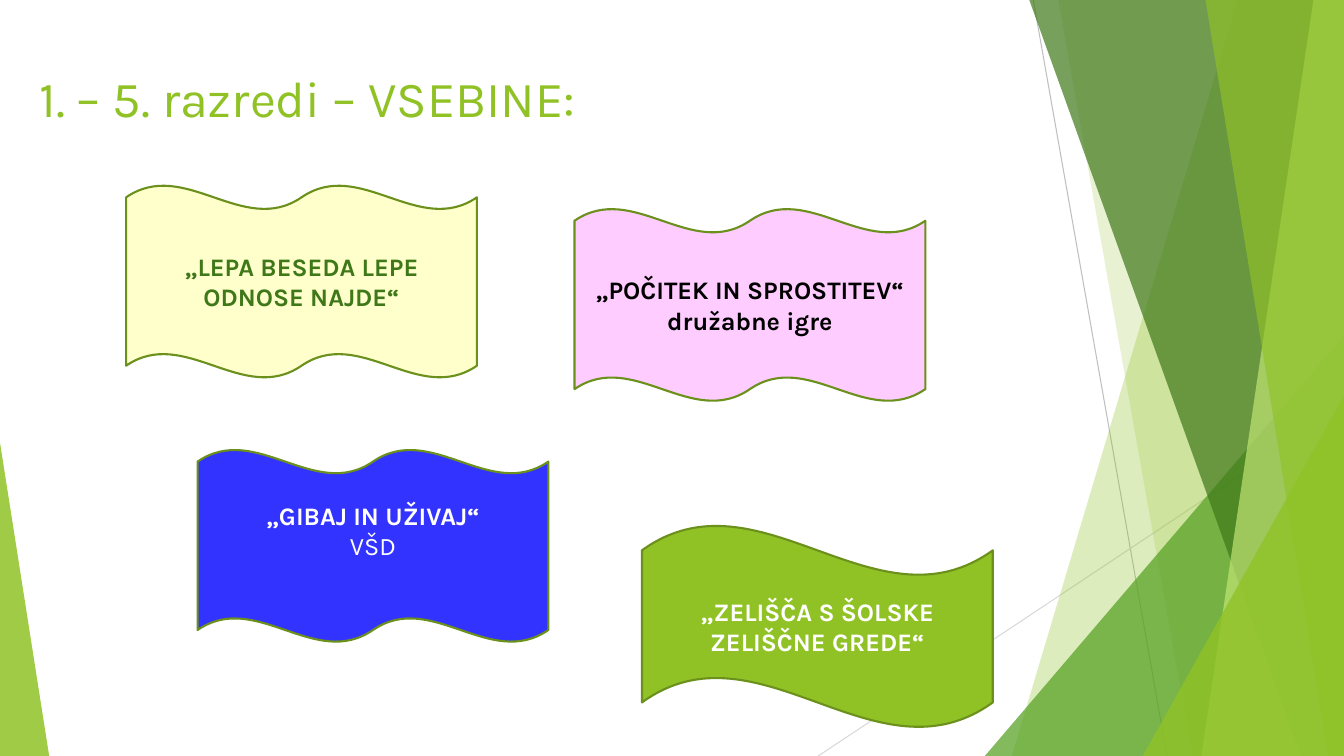
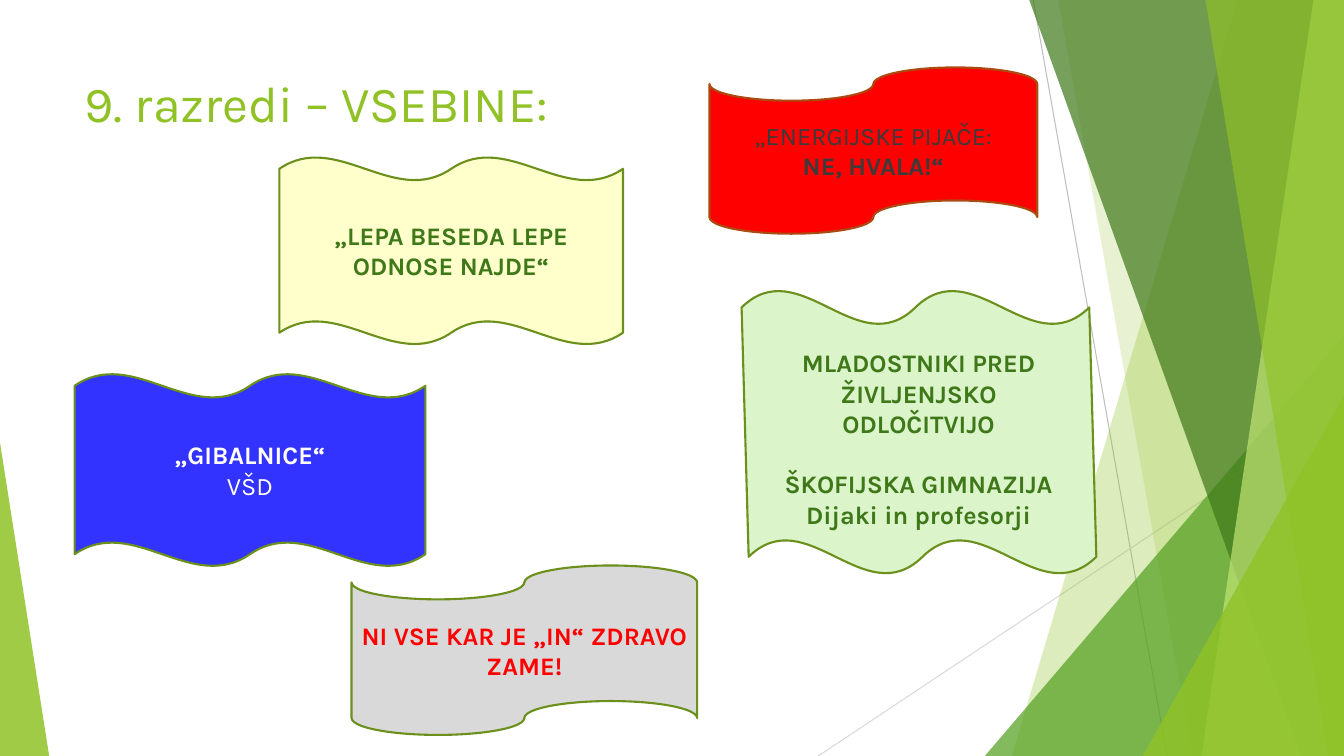
import dataclasses

import pptx
import pptx.dml.color
import pptx.enum.shapes
import pptx.enum.text
import pptx.oxml.ns
import pptx.util
from lxml import etree

Cm = pptx.util.Cm
Pt = pptx.util.Pt
Shape = pptx.enum.shapes.MSO_SHAPE
Anchor = pptx.enum.text.MSO_ANCHOR
Align = pptx.enum.text.PP_ALIGN
qn = pptx.oxml.ns.qn


@dataclasses.dataclass(frozen=True)
class Theme:
    font: str = "Karla"
    title_size: int = 36
    body_size: int = 18
    outline_width: float = 1.5
    hairline_width: float = 0.75
    green: str = "90C226"
    leaf: str = "54A021"
    forest: str = "3F7819"
    lime: str = "C0E474"
    outline: str = "6B901C"
    rust: str = "AB4B12"
    cream: str = "FFFFCC"
    pink: str = "FFCCFF"
    blue: str = "3333FF"
    mint: str = "DBF4CA"
    silver: str = "D9D9D9"
    grey: str = "BFBFBF"
    red: str = "FF0000"
    charcoal: str = "3B3B3B"
    black: str = "000000"
    white: str = "FFFFFF"


THEME = Theme()
WIDTH, HEIGHT = 33.87, 19.05
FLAG_WIDTH, FLAG_HEIGHT = 8.84, 4.85
LINE_HEIGHT = 0.76  # one line of body text


def rgb(value):
    return pptx.dml.color.RGBColor.from_string(value)


class Deck:
    """Holds the style and the slide being built."""

    def __init__(self, theme):
        self.theme = theme
        self.presentation = pptx.Presentation()
        self.presentation.slide_width = Cm(WIDTH)
        self.presentation.slide_height = Cm(HEIGHT)
        self.slide = None

    def add_slide(self, title, left, top):
        layout = self.presentation.slide_layouts[5]
        self.slide = self.presentation.slides.add_slide(layout)
        self.backdrop()
        shape = self.slide.shapes.title
        shape.left, shape.top = Cm(left), Cm(top)
        shape.width, shape.height = Cm(23.88), Cm(3.66)
        frame = shape.text_frame
        frame.auto_size = pptx.enum.text.MSO_AUTO_SIZE.NONE
        self.fill_text(frame, [(title, False)], self.theme.green, Anchor.TOP,
                       Align.LEFT, self.theme.title_size)

    def backdrop(self):
        theme = self.theme
        self.hairline((26.04, 0), (29.41, HEIGHT), theme.grey)
        self.hairline((WIDTH, 10.24), (20.62, HEIGHT), theme.silver)
        self.band(31.19, 25.5, theme.green, 30)
        self.band(26.67, 30.05, theme.green, 20)
        self.triangle(24.82, 9.05, 10.59, 1, theme.leaf, 72)
        self.band(25.94, 32.79, theme.forest, 70)
        self.band(33.1, 30.28, theme.lime, 70)
        self.band(30.38, 33.48, theme.green, 65)
        self.triangle(28.8, 5.07, 9.07, 1, theme.green, 80)
        self.triangle(0, 1.24, 7.9, 0, theme.green, 85)

    def hairline(self, start, end, color):
        line = self.slide.shapes.add_connector(
            pptx.enum.shapes.MSO_CONNECTOR.STRAIGHT,
            *(Cm(value) for value in start + end))
        line.line.color.rgb = rgb(color)
        line.line.width = Pt(self.theme.hairline_width)
        etree.SubElement(line._element.spPr, qn("a:effectLst"))

    def band(self, top_left, bottom_left, color, opacity):
        """A band from a slanted left side to the right slide edge."""
        builder = self.slide.shapes.build_freeform(Cm(top_left), 0)
        corners = [(WIDTH, 0), (WIDTH, HEIGHT), (bottom_left, HEIGHT)]
        builder.add_line_segments([(Cm(x), Cm(y)) for x, y in corners])
        self.glass(builder.convert_to_shape(), color, opacity)

    def triangle(self, left, width, height, apex, color, opacity):
        """A triangle standing on the bottom slide edge."""
        shape = self.slide.shapes.add_shape(
            Shape.ISOSCELES_TRIANGLE, Cm(left), Cm(HEIGHT - height),
            Cm(width), Cm(height))
        shape.adjustments[0] = apex
        self.glass(shape, color, opacity)

    def glass(self, shape, color, opacity):
        self.paint(shape, color)
        fill = shape._element.spPr.find(qn("a:solidFill"))
        etree.SubElement(fill[0], qn("a:alpha"), val=str(opacity * 1000))

    def paint(self, shape, color, outline=None):
        shape.shadow.inherit = False
        shape.fill.solid()
        shape.fill.fore_color.rgb = rgb(color)
        if outline:
            shape.line.color.rgb = rgb(outline)
            shape.line.width = Pt(self.theme.outline_width)
        else:
            shape.line.fill.background()

    def flag(self, left, top, fill, lines=(), color=None, kind=Shape.DOUBLE_WAVE,
             width=FLAG_WIDTH, height=FLAG_HEIGHT, outline=None):
        shape = self.slide.shapes.add_shape(
            kind, Cm(left), Cm(top), Cm(width), Cm(height))
        self.paint(shape, fill, outline or self.theme.outline)
        if lines:
            self.fill_text(shape.text_frame, lines, color)
        return shape

    def text(self, left, top, width, height, lines, color):
        box = self.slide.shapes.add_textbox(
            Cm(left), Cm(top), Cm(width), Cm(height))
        self.fill_text(box.text_frame, lines, color, Anchor.TOP)
        return box

    def fill_text(self, frame, lines, color, anchor=Anchor.MIDDLE,
                  align=Align.CENTER, size=None):
        """Set (text, bold) lines, one paragraph each."""
        frame.word_wrap = True
        frame.vertical_anchor = anchor
        for index, (text, bold) in enumerate(lines):
            paragraph = frame.add_paragraph() if index else frame.paragraphs[0]
            paragraph.text = text
            paragraph.alignment = align
            font = paragraph.font
            font.name = self.theme.font
            font.size = Pt(size or self.theme.body_size)
            font.bold = bold
            font.color.rgb = rgb(color)


def build_lower_grades(deck):
    theme = deck.theme
    deck.add_slide("1. – 5. razredi – VSEBINE:", 0.74, 1.57)
    deck.flag(14.48, 5.26, theme.pink,
              [("„POČITEK IN SPROSTITEV“", True), ("družabne igre", True)],
              theme.black)
    deck.flag(3.18, 4.67, theme.cream,
              [("„LEPA BESEDA LEPE ODNOSE NAJDE“", True)], theme.forest)
    exercise = deck.flag(4.98, 11.33, theme.blue,
                         [("„GIBAJ IN UŽIVAJ“", True), ("VŠD", False)],
                         theme.white)
    exercise.text_frame.margin_bottom += Cm(LINE_HEIGHT)
    deck.flag(16.18, 13.23, theme.green,
              [("„ZELIŠČA S ŠOLSKE", True), ("ZELIŠČNE GREDE“", True)],
              theme.white, Shape.WAVE, height=5.11)


def build_ninth_grade(deck):
    theme = deck.theme
    deck.add_slide("9. razredi – VSEBINE:", 1.88, 1.7)
    deck.flag(7.04, 3.96, theme.cream,
              [("„LEPA BESEDA LEPE ODNOSE NAJDE“", True)], theme.forest,
              width=8.66, height=4.72)

    # Tall flag with its text in a separate box
    tall_flag = deck.flag(18.69, 7.32, theme.mint, width=8.94, height=7.14)
    tall_flag.adjustments[0] = 0.06
    tall_flag.adjustments[1] = 0.01
    deck.flag(1.88, 9.42, theme.blue,
              [("„GIBALNICE“", True), ("VŠD", False)], theme.white)
    guidance = deck.text(19.02, 8.64, 8.26, 6.4,
                         [("MLADOSTNIKI PRED ŽIVLJENJSKO ODLOČITVIJO", True),
                          ("ŠKOFIJSKA GIMNAZIJA", True),
                          ("Dijaki in profesorji", True)], theme.forest)
    guidance.text_frame.paragraphs[1].space_before = Cm(LINE_HEIGHT)

    # Punched tapes
    deck.flag(8.86, 14.25, theme.silver,
              [("NI VSE KAR JE „IN“ ZDRAVO ZAME!", True)], theme.red,
              Shape.FLOWCHART_PUNCHED_TAPE, 8.71, 4.27)
    deck.flag(17.88, 1.7, theme.red,
              [("„ENERGIJSKE PIJAČE:", False), ("NE, HVALA!“", True)],
              theme.charcoal, Shape.FLOWCHART_PUNCHED_TAPE, 8.26, 4.19,
              theme.rust)


def main():
    deck = Deck(THEME)
    build_lower_grades(deck)
    build_ninth_grade(deck)
    deck.presentation.save("out.pptx")


if __name__ == "__main__":
    main()
